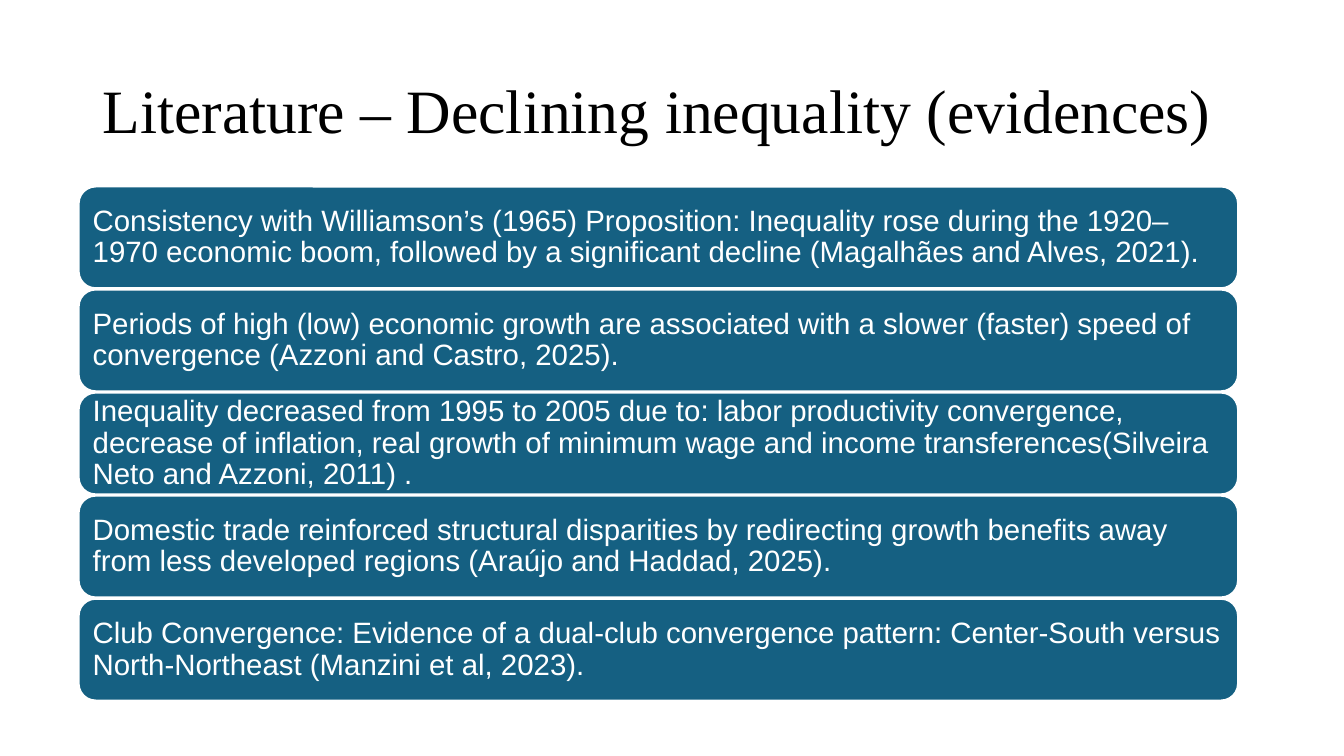
from dataclasses import dataclass

from pptx import Presentation
from pptx.dml.color import RGBColor
from pptx.enum.shapes import MSO_SHAPE
from pptx.enum.text import MSO_ANCHOR, PP_ALIGN
from pptx.util import Inches, Pt

ROUNDED = MSO_SHAPE.ROUNDED_RECTANGLE
MIDDLE = MSO_ANCHOR.MIDDLE
LEFT = PP_ALIGN.LEFT

TITLE = "Literature – Declining inequality (evidences)"
FINDINGS = [
    "Consistency with Williamson’s (1965) Proposition: Inequality rose during the "
    "1920–1970 economic boom, followed by a significant decline (Magalhães and Alves, 2021).",
    "Periods of high (low) economic growth are associated with a slower (faster) speed of "
    "convergence (Azzoni and Castro, 2025).",
    "Inequality decreased from 1995 to 2005 due to: labor productivity convergence, decrease "
    "of inflation, real growth of minimum wage and income transferences(Silveira Neto and "
    "Azzoni, 2011) .",
    "Domestic trade reinforced structural disparities by redirecting growth benefits away "
    "from less developed regions (Araújo and Haddad, 2025).",
    "Club Convergence: Evidence of a dual-club convergence pattern: Center-South versus "
    "North-Northeast (Manzini et al, 2023).",
]


@dataclass(frozen=True)
class Theme:
    title_font: str = "Times New Roman"
    body_font: str = "Arial"
    title_size: int = 44
    body_size: int = 21
    ink: RGBColor = RGBColor(0x00, 0x00, 0x00)
    paper: RGBColor = RGBColor(0xFF, 0xFF, 0xFF)
    panel: RGBColor = RGBColor(0x15, 0x60, 0x82)


class SlideBuilder:
    def __init__(self, page, theme):
        self.page = page
        self.theme = theme

    def add_text(self, box, text, font, size, color):
        frame = box.text_frame
        frame.word_wrap = True
        frame.vertical_anchor = MIDDLE
        para = frame.paragraphs[0]
        para.alignment = LEFT
        para.line_spacing = 0.9
        span = para.add_run()
        span.text = text
        span.font.name = font
        span.font.size = Pt(size)
        span.font.color.rgb = color

    def title(self, text, left, top, width, height):
        box = self.page.shapes.add_textbox(
            Inches(left), Inches(top), Inches(width), Inches(height))
        self.add_text(box, text, self.theme.title_font, self.theme.title_size, self.theme.ink)

    def panel(self, text, left, top, width, height):
        box = self.page.shapes.add_shape(
            ROUNDED, Inches(left), Inches(top), Inches(width), Inches(height))
        box.shadow.inherit = False
        box.fill.solid()
        box.fill.fore_color.rgb = self.theme.panel
        box.line.color.rgb = self.theme.paper
        box.line.width = Pt(1.5)
        frame = box.text_frame
        frame.margin_left = frame.margin_right = Inches(0.09)
        frame.margin_top = frame.margin_bottom = Inches(0.09)
        self.add_text(box, text, self.theme.body_font, self.theme.body_size, self.theme.paper)


def main():
    deck = Presentation()
    deck.slide_width = Inches(13.33)
    deck.slide_height = Inches(7.5)
    page = deck.slides.add_slide(deck.slide_layouts[6])
    builder = SlideBuilder(page, Theme())

    builder.title(TITLE, 0.92, 0.4, 11.5, 1.45)
    first_top, panel_height, last_bottom = 1.85, 1.01, 6.95
    pitch = (last_bottom - panel_height - first_top) / (len(FINDINGS) - 1)
    for index, finding in enumerate(FINDINGS):
        builder.panel(finding, 0.78, first_top + index * pitch, 11.5, panel_height)

    deck.save("out.pptx")


if __name__ == "__main__":
    main()
